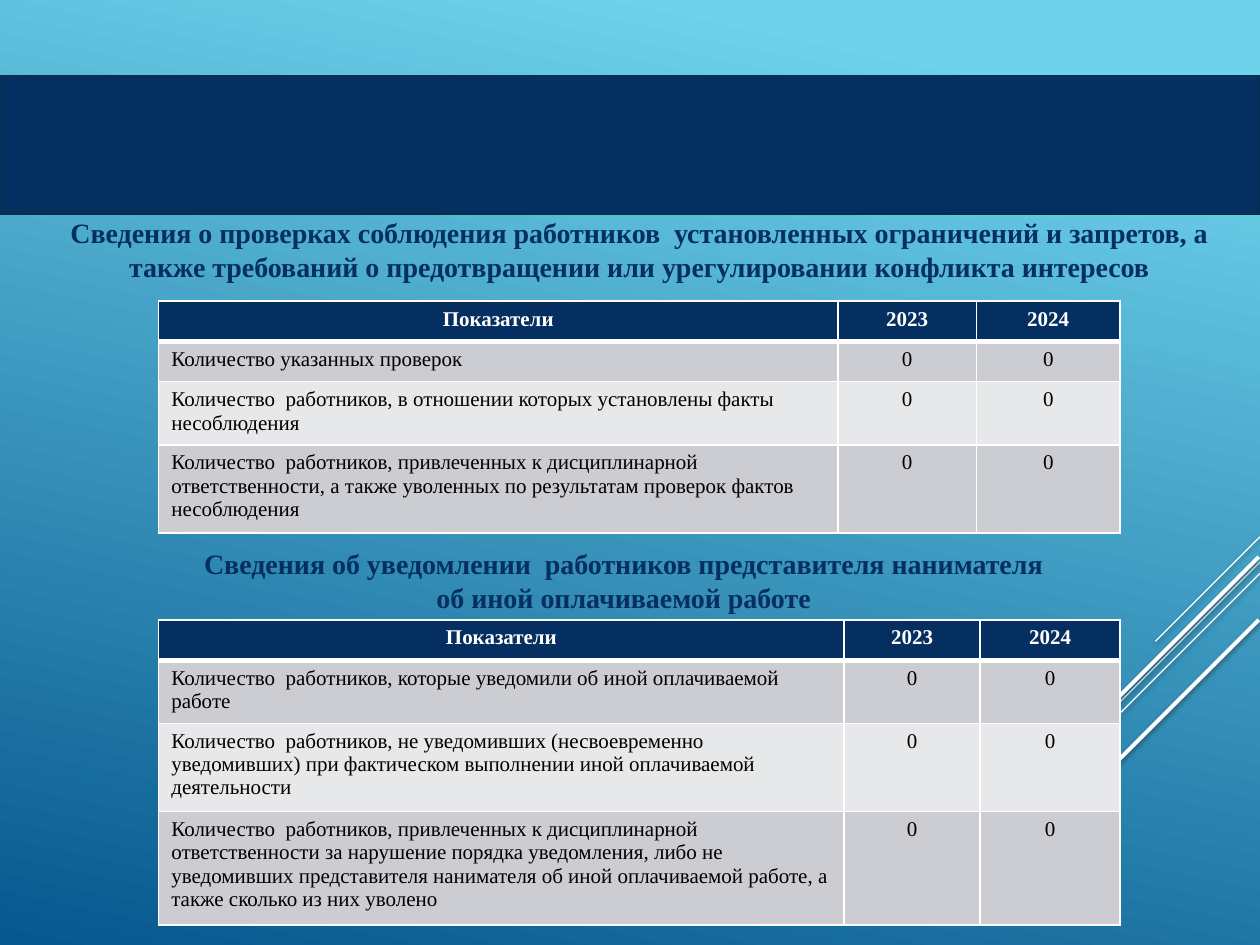
from lxml import etree
from pptx import Presentation
from pptx.dml.color import RGBColor
from pptx.enum.shapes import MSO_CONNECTOR, MSO_SHAPE
from pptx.enum.text import MSO_ANCHOR, MSO_AUTO_SIZE, PP_ALIGN
from pptx.oxml.ns import qn
from pptx.util import Inches, Pt

LINE = MSO_CONNECTOR.STRAIGHT
BAND = MSO_SHAPE.FLOWCHART_PROCESS
TOP = MSO_ANCHOR.TOP
GROW = MSO_AUTO_SIZE.SHAPE_TO_FIT_TEXT
LEFT, CENTER = PP_ALIGN.LEFT, PP_ALIGN.CENTER
NAVY, WHITE, BLACK = "052F61", "FFFFFF", "000000"
STRIPES = ["CCCDD2", "E7E8EA"]


def tint(color, code):
    color.rgb = RGBColor.from_string(code)


def write(frame, text, size, code, bold, align):
    para = frame.paragraphs[0]
    para.alignment = align
    run = para.add_run()
    run.text = text
    run.font.name = "Times New Roman"
    run.font.size = Pt(size)
    run.font.bold = bold
    tint(run.font.color, code)


deck = Presentation()
deck.slide_width, deck.slide_height = Inches(10), Inches(7.5)
slide = deck.slides.add_slide(deck.slide_layouts[5])
shapes = slide.shapes

# Background: angles count anticlockwise here
back = slide.background.fill
back.gradient()
back.gradient_angle = 360 - 102
for stop, (place, code) in zip(back.gradient_stops, [(0.1, "6ED2EB"), (1, "06588E")]):
    stop.position = place
    tint(stop.color, code)

# Diagonal rays, all at 45 degrees: right end, drop, weight
rays = [
    (10, 4.26, 0.83, 0.75),
    (10, 4.46, 2.7, 0.75),
    (10, 4.55, 1.72, 0.75),
    (9.99, 4.42, 1.57, 2.25),
    (9.99, 4.92, 1.14, 2.25),
]
for x, y, drop, weight in rays:
    ray = shapes.add_connector(LINE, Inches(x), Inches(y), Inches(x - drop), Inches(y + drop))
    ray.line.width = Pt(weight)
    tint(ray.line.color, WHITE)
    effects = etree.SubElement(ray._element.spPr, qn("a:effectLst"))
    shade = etree.SubElement(effects, qn("a:outerShdw"), blurRad=str(Pt(3.1)),
                             dist=str(Pt(1.6)), dir="5400000", rotWithShape="0")
    ink = etree.SubElement(shade, qn("a:srgbClr"), val=BLACK)
    etree.SubElement(ink, qn("a:alpha"), val="38000")

band = shapes.add_shape(BAND, 0, Inches(0.6), Inches(10), Inches(1.1))
band.shadow.inherit = False
band.fill.solid()
tint(band.fill.fore_color, NAVY)
band.line.width = Pt(1)
tint(band.line.color, "043148")

# Headings
title = shapes.title
title.left, title.top = Inches(0.35), Inches(1.66)
title.width, title.height = Inches(9.45), Inches(0.63)
second = shapes.add_textbox(Inches(1.41), Inches(4.29), Inches(7.08), Inches(0.63))
heads = [
    (title, "Сведения о проверках соблюдения работников  установленных ограничений и запретов, "
            "а также требований о предотвращении или урегулировании конфликта интересов"),
    (second, "Сведения об уведомлении  работников представителя нанимателя "
             "об иной оплачиваемой работе"),
]
for box, text in heads:
    frame = box.text_frame
    frame.word_wrap = True
    frame.auto_size = GROW
    frame.vertical_anchor = TOP
    write(frame, text, 16, NAVY, True, CENTER)

# Tables: top, column widths, row heights, row labels
tables = [
    (2.39, [5.39, 1.1, 1.14], [0.32, 0.32, 0.5, 0.7], [
        "Количество указанных проверок",
        "Количество  работников, в отношении которых установлены факты несоблюдения",
        "Количество  работников, привлеченных к дисциплинарной ответственности, "
        "а также уволенных по результатам проверок фактов несоблюдения",
    ]),
    (4.92, [5.44, 1.08, 1.11], [0.32, 0.5, 0.7, 0.9], [
        "Количество  работников, которые уведомили об иной оплачиваемой работе",
        "Количество  работников, не уведомивших (несвоевременно уведомивших) "
        "при фактическом выполнении иной оплачиваемой деятельности",
        "Количество  работников, привлеченных к дисциплинарной ответственности "
        "за нарушение порядка уведомления, либо не уведомивших представителя нанимателя "
        "об иной оплачиваемой работе, а также сколько из них уволено",
    ]),
]
for top, widths, heights, labels in tables:
    rows = [["Показатели", "2023", "2024"]] + [[label, "0", "0"] for label in labels]
    table = shapes.add_table(len(rows), len(widths), Inches(1.26), Inches(top),
                             Inches(sum(widths)), Inches(sum(heights))).table
    for col, width in zip(table.columns, widths):
        col.width = Inches(width)
    for r, (row, height) in enumerate(zip(rows, heights)):
        table.rows[r].height = Inches(height)
        head = r == 0
        for c, text in enumerate(row):
            cell = table.cell(r, c)
            props = cell._tc.get_or_add_tcPr()
            for side in "LRTB":
                thick = (r, side) in [(0, "B"), (1, "T")]
                edge = etree.SubElement(props, qn("a:ln" + side), w=str(Pt(3 if thick else 1)))
                paint = etree.SubElement(edge, qn("a:solidFill"))
                etree.SubElement(paint, qn("a:srgbClr"), val=WHITE)
            cell.fill.solid()
            tint(cell.fill.fore_color, NAVY if head else STRIPES[(r - 1) % 2])
            write(cell.text_frame, text, 12, WHITE if head else BLACK, head,
                  CENTER if head or c else LEFT)

deck.save("out.pptx")
